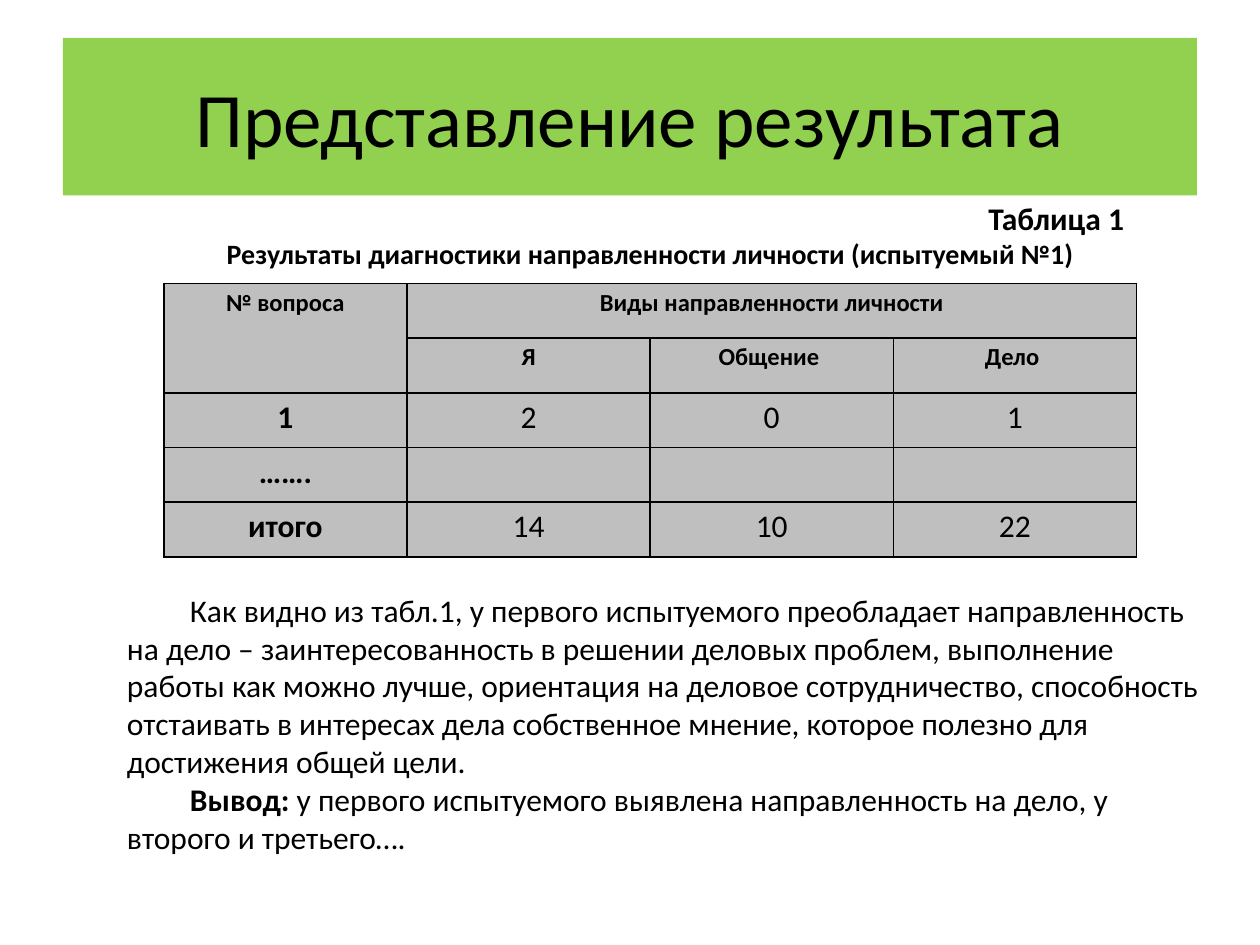
"""Build the slide that presents the results of a personality orientation test."""
from dataclasses import dataclass

from lxml import etree
from pptx import Presentation
from pptx import util as u
from pptx.dml.color import RGBColor
from pptx.enum import shapes, text
from pptx.oxml.ns import qn


@dataclass(frozen=True)
class Theme:
    font: str = "Calibri"
    ink: str = "000000"
    band: str = "92D050"
    cell: str = "BFBFBF"
    title: int = 44
    body: int = 18
    caption: int = 16
    header: int = 14
    border: float = 1


@dataclass(frozen=True)
class Run:
    text: str
    size: int
    bold: bool = False


@dataclass(frozen=True)
class Para:
    runs: tuple[Run, ...]
    align: text.PP_ALIGN = text.PP_ALIGN.CENTER
    indent: float = 0
    spacing: float = 1.0


@dataclass(frozen=True)
class Box:
    left: float
    top: float
    width: float
    height: float

    def lengths(self) -> list[u.Length]:
        return [u.Inches(v) for v in (self.left, self.top, self.width, self.height)]


THEME = Theme()
HEADER_ROWS = 2
ROWS = (
    ("№ вопроса", "Виды направленности личности", "", ""),
    ("", "Я", "Общение ", "Дело "),
    ("1", "2", "0", "1"),
    ("…….", "", "", ""),
    ("итого", "14", "10", "22"),
)
MERGES = (((0, 0), (1, 0)), ((0, 1), (0, 3)))
CAPTION = (
    Para((Run("Таблица 1", THEME.body, True),), text.PP_ALIGN.RIGHT),
    Para((Run("Результаты диагностики направленности личности (испытуемый №1)",
              THEME.caption, True),)),
)
FINDINGS = (
    Para((Run("Как видно из табл.1, у первого испытуемого преобладает направленность "
              "на дело – заинтересованность в решении деловых проблем, выполнение "
              "работы как можно лучше, ориентация на деловое сотрудничество, "
              "способность отстаивать в интересах дела собственное мнение, которое "
              "полезно для достижения общей цели.", THEME.body),),
         text.PP_ALIGN.LEFT, 0.5),
    Para((Run("Вывод:", THEME.body, True),
          Run(" у первого испытуемого выявлена направленность на дело, "
              "у второго и третьего….", THEME.body)),
         text.PP_ALIGN.LEFT, 0.5),
)


def apply(target, values: dict) -> None:
    """Set every named attribute on the target."""
    for name, value in values.items():
        setattr(target, name, value)


def paint(target, color: str) -> None:
    """Give a shape or cell a solid fill."""
    target.fill.solid()
    target.fill.fore_color.rgb = RGBColor.from_string(color)


def write(tf, paras: tuple[Para, ...]) -> None:
    """Write formatted paragraphs into a text frame."""
    for i, para in enumerate(paras):
        p = tf.add_paragraph() if i else tf.paragraphs[0]
        apply(p, {"alignment": para.align, "line_spacing": para.spacing})
        if para.indent:
            p._p.get_or_add_pPr().set("indent", str(u.Inches(para.indent)))
        for run in para.runs:
            r = p.add_run()
            r.text = run.text
            apply(r.font, {"name": THEME.font, "size": u.Pt(run.size), "bold": run.bold})
            r.font.color.rgb = RGBColor.from_string(THEME.ink)


def add_title(s, box: Box, label: str) -> None:
    """Draw the coloured title band."""
    sp = s.shapes.add_shape(shapes.MSO_SHAPE.RECTANGLE, *box.lengths())
    sp.shadow.inherit = False
    paint(sp, THEME.band)
    sp.line.fill.background()
    apply(sp.text_frame, {"word_wrap": True, "vertical_anchor": text.MSO_ANCHOR.MIDDLE})
    write(sp.text_frame, (Para((Run(label, THEME.title),)),))


def add_text(s, box: Box, paras: tuple[Para, ...]) -> None:
    """Add a wrapping text box."""
    tf = s.shapes.add_textbox(*box.lengths()).text_frame
    tf.word_wrap = True
    write(tf, paras)


def add_borders(cell) -> None:
    """Outline a cell on all four sides, ahead of its fill."""
    tc_pr = cell._tc.get_or_add_tcPr()
    for i, side in enumerate(("lnL", "lnR", "lnT", "lnB")):
        ln = etree.Element(qn(f"a:{side}"), w=str(u.Pt(THEME.border)))
        fill = etree.SubElement(ln, qn("a:solidFill"))
        etree.SubElement(fill, qn("a:srgbClr"), val=THEME.ink)
        tc_pr.insert(i, ln)


def add_results(s, box: Box) -> None:
    """Draw the table of results."""
    table = s.shapes.add_table(len(ROWS), len(ROWS[0]), *box.lengths()).table
    for i, row in enumerate(ROWS):
        for j, label in enumerate(row):
            cell = table.cell(i, j)
            paint(cell, THEME.cell)
            add_borders(cell)
            apply(cell, {"margin_left": u.Inches(0.07), "margin_right": u.Inches(0.07),
                         "margin_top": 0, "margin_bottom": 0})
            if label:
                header = i < HEADER_ROWS
                run = Run(label, THEME.header if header else THEME.body, header or j == 0)
                write(cell.text_frame, (Para((run,), spacing=1.15),))
    for first, last in MERGES:
        table.cell(*first).merge(table.cell(*last))


def main() -> None:
    """Build and save the slide."""
    prs = Presentation()
    apply(prs, {"slide_width": u.Inches(10), "slide_height": u.Inches(7.5)})
    s = prs.slides.add_slide(prs.slide_layouts[6])
    add_title(s, Box(0.5, 0.3, 9, 1.25), "Представление результата")
    add_results(s, Box(1.3, 2.25, 7.72, 2.17))
    add_text(s, Box(1.3, 1.53, 7.72, 0.67), CAPTION)
    add_text(s, Box(0.91, 4.64, 8.74, 2.22), FINDINGS)
    prs.save("out.pptx")


if __name__ == "__main__":
    main()
